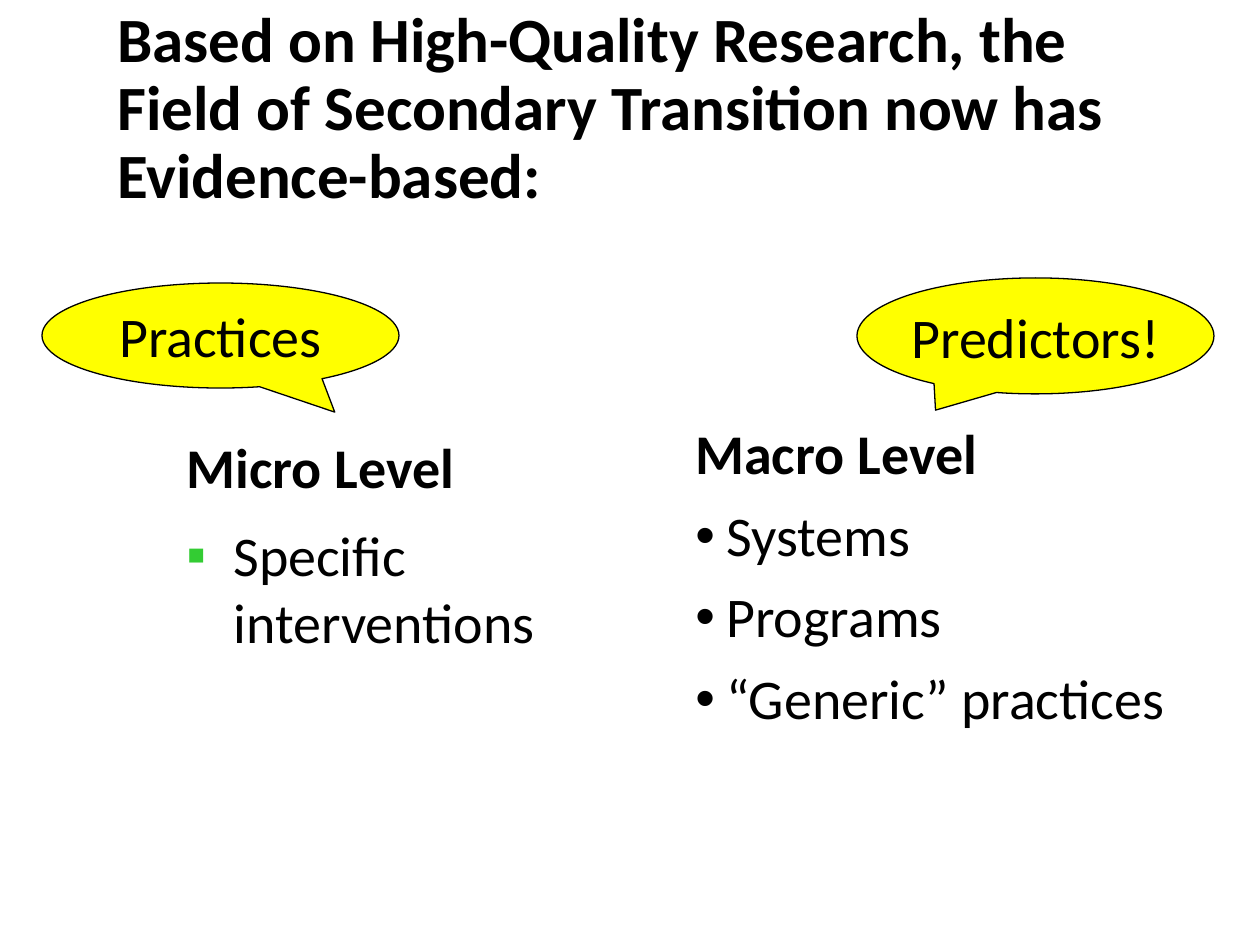
"""Build the slide on evidence-based practices and predictors in secondary transition."""
from dataclasses import dataclass

import lxml.etree
import pptx
import pptx.dml.color
import pptx.enum.shapes
import pptx.enum.text
import pptx.oxml.ns
import pptx.util

EMU_PER_PX = 914400 / 126


def px(length):
    return pptx.util.Emu(round(length * EMU_PER_PX))


def rgb(code):
    return pptx.dml.color.RGBColor.from_string(code)


@dataclass(frozen=True)
class Theme:
    font: str = "Calibri"
    ink: str = "000000"
    callout: str = "FFFF00"
    accent: str = "33CC33"
    title_size: int = 36
    text_size: int = 32
    outline: float = 0.75


def write(paragraph, text, *, theme, size, bold=False, align=None, leading=None, before=0):
    run = paragraph.add_run()
    run.text = text
    run.font.name = theme.font
    run.font.size = pptx.util.Pt(size)
    run.font.bold = bold
    run.font.color.rgb = rgb(theme.ink)
    paragraph.alignment = align
    paragraph.line_spacing = leading
    paragraph.space_before = pptx.util.Pt(before)


def add_bullet(paragraph, mark, color, indent):
    props = paragraph._p.get_or_add_pPr()
    props.set("marL", str(px(indent)))
    props.set("indent", str(-px(indent)))
    qn = pptx.oxml.ns.qn
    tint = lxml.etree.SubElement(props, qn("a:buClr"))
    lxml.etree.SubElement(tint, qn("a:srgbClr"), val=color)
    lxml.etree.SubElement(props, qn("a:buFont"), typeface="Arial")
    lxml.etree.SubElement(props, qn("a:buChar"), char=mark)


class SlideBuilder:
    def __init__(self, slide, theme):
        self.slide = slide
        self.theme = theme

    def text_frame(self, box):
        frame = self.slide.shapes.add_textbox(*map(px, box)).text_frame
        frame.word_wrap = True
        return frame

    def title(self, text, box):
        frame = self.text_frame(box)
        frame.vertical_anchor = pptx.enum.text.MSO_ANCHOR.MIDDLE
        write(frame.paragraphs[0], text, theme=self.theme,
              size=self.theme.title_size, bold=True, leading=0.9)

    def callout(self, text, box, tail):
        kind = pptx.enum.shapes.MSO_SHAPE.OVAL_CALLOUT
        bubble = self.slide.shapes.add_shape(kind, *map(px, box))
        bubble.adjustments[0], bubble.adjustments[1] = tail
        bubble.shadow.inherit = False
        bubble.fill.solid()
        bubble.fill.fore_color.rgb = rgb(self.theme.callout)
        bubble.line.color.rgb = rgb(self.theme.ink)
        bubble.line.width = pptx.util.Pt(self.theme.outline)
        frame = bubble.text_frame
        frame.word_wrap = False
        frame.vertical_anchor = pptx.enum.text.MSO_ANCHOR.MIDDLE
        write(frame.paragraphs[0], text, theme=self.theme, size=self.theme.text_size,
              align=pptx.enum.text.PP_ALIGN.CENTER)

    def level(self, heading, points, box, *, mark, color, indent, leading=None):
        frame = self.text_frame(box)
        style = dict(theme=self.theme, size=self.theme.text_size, leading=leading)
        write(frame.paragraphs[0], heading, bold=True, **style)
        for point in points:
            paragraph = frame.add_paragraph()
            write(paragraph, point, before=12, **style)
            add_bullet(paragraph, mark, color, indent)


def main():
    deck = pptx.Presentation()
    deck.slide_width, deck.slide_height = px(1260), px(945)
    theme = Theme()
    builder = SlideBuilder(deck.slides.add_slide(deck.slide_layouts[6]), theme)

    builder.title("Based on High-Quality Research, the Field of Secondary Transition "
                  "now has Evidence-based:", (105, 42, 1050, 136))
    builder.callout("Practices", (42, 283, 357, 105), (0.32, 0.73))
    builder.level("Micro Level", ["Specific interventions"], (174, 426, 410, 378),
                  mark="▪", color=theme.accent, indent=47)
    builder.callout("Predictors!", (857, 278, 357, 116), (-0.28, 0.64))
    builder.level("Macro Level", ["Systems", "Programs", "“Generic” practices"],
                  (683, 420, 588, 472), mark="•", color=theme.ink, indent=31, leading=0.9)
    deck.save("out.pptx")


if __name__ == "__main__":
    main()
